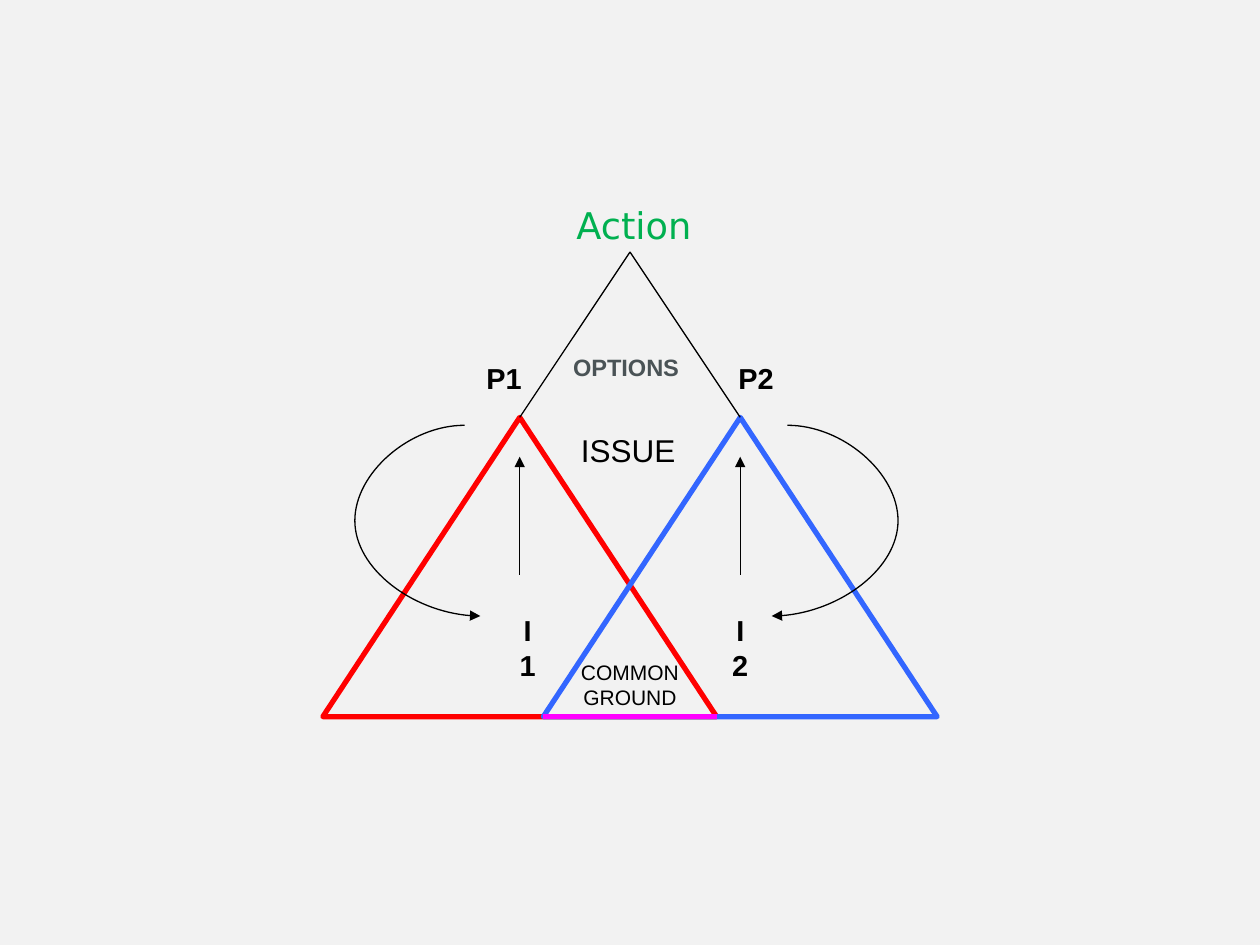
"""Build a slide of two overlapping triangles that meet on common ground and lead to action."""
from dataclasses import dataclass

from lxml import etree
from pptx import Presentation
from pptx.dml.color import RGBColor
from pptx.enum.shapes import MSO_CONNECTOR, MSO_SHAPE
from pptx.enum.text import MSO_AUTO_SIZE, PP_ALIGN
from pptx.oxml.ns import qn
from pptx.util import Pt

STRAIGHT, CURVE = MSO_CONNECTOR.STRAIGHT, MSO_CONNECTOR.CURVE
TRIANGLE = MSO_SHAPE.ISOSCELES_TRIANGLE
GROW = MSO_AUTO_SIZE.SHAPE_TO_FIT_TEXT
CENTER = PP_ALIGN.CENTER


@dataclass(frozen=True)
class Theme:
    background: str = "F2F2F2"
    ink: str = "000000"
    first_party: str = "FF0000"
    second_party: str = "3366FF"
    shared: str = "FF00FF"
    options: str = "4A5356"
    action: str = "00B050"
    font: str = "Arial"
    action_font: str = "DejaVu Sans"
    action_size: float = 21
    issue_size: float = 18
    party_size: float = 16.5
    options_size: float = 13.5
    ground_size: float = 12
    thin: float = 0.75
    thick: float = 3


theme = Theme()
deck = Presentation()
deck.slide_width, deck.slide_height = Pt(720), Pt(540)
page = deck.slides.add_slide(deck.slide_layouts[6])
page.background.fill.solid()
page.background.fill.fore_color.rgb = RGBColor.from_string(theme.background)


def add_line(kind, start, end, color, width, arrow=False):
    line = page.shapes.add_connector(kind, *(Pt(value) for value in start + end))
    line.line.color.rgb = RGBColor.from_string(color)
    line.line.width = Pt(width)
    properties = line._element.spPr
    if arrow:
        etree.SubElement(properties.find(qn("a:ln")), qn("a:tailEnd"), type="triangle")
    etree.SubElement(properties, qn("a:effectLst"))
    return line


def add_label(text, frame, size, color=theme.ink, bold=False, font=theme.font):
    box = page.shapes.add_textbox(*(Pt(value) for value in frame))
    box.text_frame.word_wrap = True
    box.text_frame.auto_size = GROW
    para = box.text_frame.paragraphs[0]
    para.alignment = CENTER
    span = para.add_run()
    span.text = text
    span.font.name = font
    span.font.size = Pt(size)
    span.font.bold = bold
    span.font.color.rgb = RGBColor.from_string(color)


middle, top, shoulder, base = 360, 144, 238.5, 409.5
half_gap, side = 63, 225
left_apex, right_apex = middle - half_gap, middle + half_gap

for apex, color in ((left_apex, theme.first_party), (right_apex, theme.second_party)):
    triangle = page.shapes.add_shape(
        TRIANGLE, Pt(apex - side / 2), Pt(shoulder), Pt(side), Pt(base - shoulder))
    triangle.shadow.inherit = False
    triangle.fill.background()
    triangle.line.color.rgb = RGBColor.from_string(color)
    triangle.line.width = Pt(theme.thick)

add_line(STRAIGHT, (right_apex - side / 2, base), (left_apex + side / 2, base),
         theme.shared, theme.thick)

for apex in (left_apex, right_apex):
    add_line(STRAIGHT, (apex, 328.5), (apex, 261), theme.ink, theme.thin, arrow=True)
    add_line(STRAIGHT, (apex, shoulder), (middle, top), theme.ink, theme.thin)

for start_x, end_x, bulge in ((450, 441, -701000), (265.5, 274.5, -695800)):
    loop = add_line(CURVE, (start_x, 243), (end_x, 352), theme.ink, theme.thin, arrow=True)
    guides = loop._element.spPr.find(qn("a:prstGeom")).get_or_add_avLst()
    etree.SubElement(guides, qn("a:gd"), name="adj1", fmla=f"val {bulge}")

for number, party_left, interest_left in ((1, 265.5, 288), (2, 409.5, 409.5)):
    add_label(f"P{number}", (party_left, 202.5, 45, 27), theme.party_size, bold=True)
    add_label(f"I{number}", (interest_left, 346.5, 27, 47.5), theme.party_size, bold=True)

add_label("ISSUE", (297, 243, 124, 29), theme.issue_size)
add_label("COMMON GROUND", (319.5, 373.5, 81, 36), theme.ground_size)
add_label("OPTIONS", (315, 198, 85.5, 24), theme.options_size, theme.options, bold=True)
add_label("Action", (297, 112.5, 130.5, 32.5), theme.action_size, theme.action,
          font=theme.action_font)

deck.save("out.pptx")
